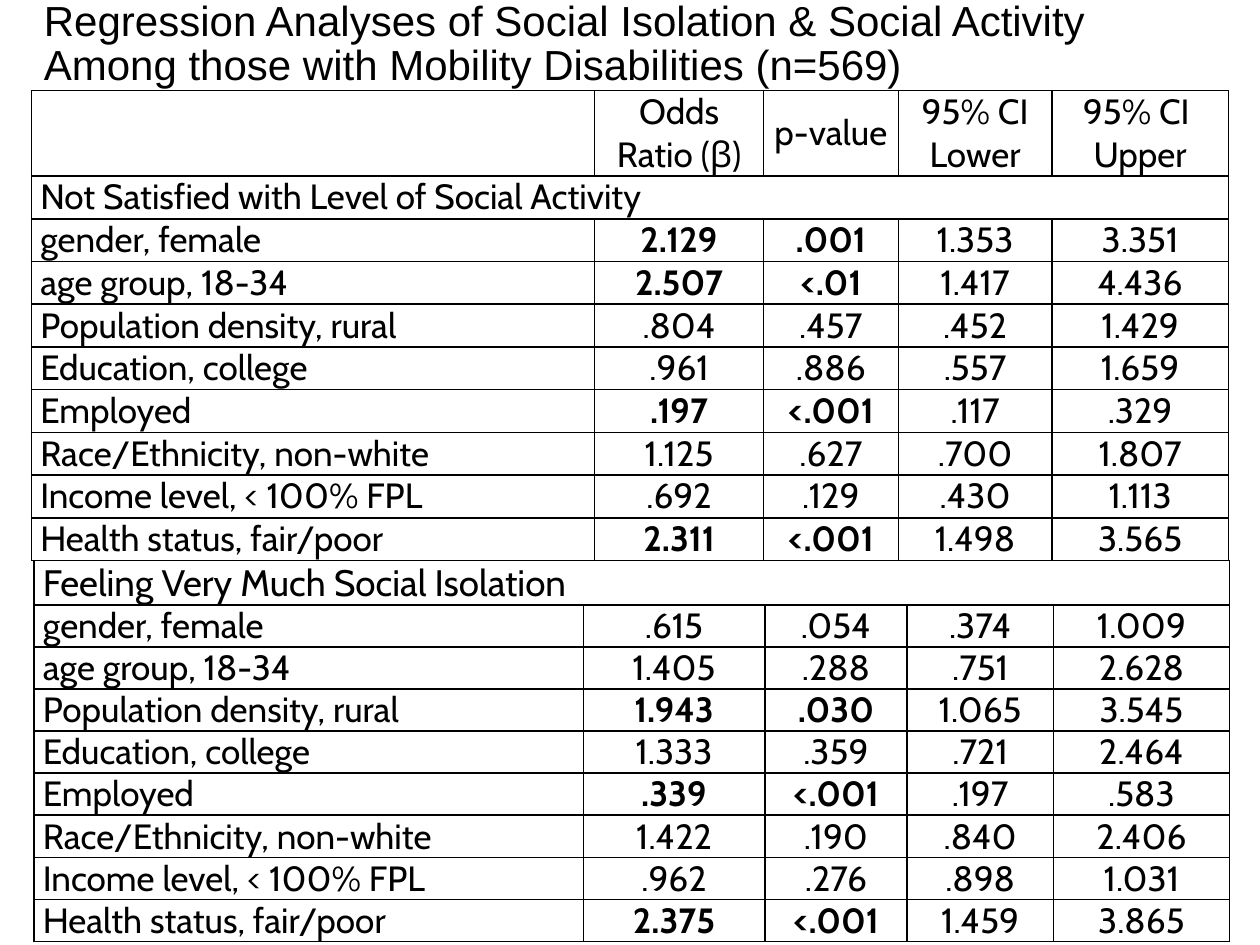
"""Build a slide with two regression tables for people with mobility disabilities."""
from lxml import etree
from pptx import Presentation
from pptx.dml.color import RGBColor
from pptx.enum import text
from pptx.oxml import ns
from pptx.util import Inches, Pt

BLACK = RGBColor(0x00, 0x00, 0x00)
ROW_HEIGHT = 1 / 3
SIGNIFICANCE = 0.05

TITLE = ("Regression Analyses of Social Isolation & Social Activity "
         "Among those with Mobility Disabilities (n=569)")
HEADER = ["", "Odds Ratio (β)", "p-value", "95% CI Lower", "95% CI \vUpper"]
PREDICTORS = ["gender, female", "age group, 18-34", "Population density, rural",
              "Education, college", "Employed", "Race/Ethnicity, non-white",
              "Income level, < 100% FPL", "Health status, fair/poor"]
ACTIVITY = {
    "heading": "Not Satisfied with Level of Social Activity",
    "heading_size": 20, "heading_height": ROW_HEIGHT, "header": HEADER,
    "left": 0.25, "top": 0.72, "columns": [4.47, 1.34, 1.07, 1.22, 1.4],
    "values": [
        ("2.129", ".001", "1.353", "3.351"),
        ("2.507", "<.01", "1.417", "4.436"),
        (".804", ".457", ".452", "1.429"),
        (".961", ".886", ".557", "1.659"),
        (".197", "<.001", ".117", ".329"),
        ("1.125", ".627", ".700", "1.807"),
        (".692", ".129", ".430", "1.113"),
        ("2.311", "<.001", "1.498", "3.565"),
    ],
}
ISOLATION = {
    "heading": "Feeling Very Much Social Isolation",
    "heading_size": 21, "heading_height": 0.35, "header": None,
    "left": 0.27, "top": 4.45, "columns": [4.36, 1.44, 1.13, 1.16, 1.4],
    "values": [
        (".615", ".054", ".374", "1.009"),
        ("1.405", ".288", ".751", "2.628"),
        ("1.943", ".030", "1.065", "3.545"),
        ("1.333", ".359", ".721", "2.464"),
        (".339", "<.001", ".197", ".583"),
        ("1.422", ".190", ".840", "2.406"),
        (".962", ".276", ".898", "1.031"),
        ("2.375", "<.001", "1.459", "3.865"),
    ],
}


def add_borders(cell):
    properties = cell._tc.get_or_add_tcPr()
    for side in ("a:lnL", "a:lnR", "a:lnT", "a:lnB"):
        line = etree.SubElement(properties, ns.qn(side), w=str(Pt(1)))
        fill = etree.SubElement(line, ns.qn("a:solidFill"))
        etree.SubElement(fill, ns.qn("a:srgbClr"), val=str(BLACK))


def style_text(para, font, size, bold=False):
    para.font.name = font
    para.font.size = Pt(size)
    para.font.color.rgb = BLACK
    para.font.bold = bold
    for span in para.runs:
        span.font.name = font
        span.font.size = Pt(size)
        span.font.color.rgb = BLACK
        span.font.bold = bold


def fill_cell(cell, words, size=20, bold=False, centred=False):
    cell.margin_left = cell.margin_right = Inches(0.07)
    cell.margin_top = cell.margin_bottom = 0
    add_borders(cell)
    cell.fill.background()
    para = cell.text_frame.paragraphs[0]
    para.text = words
    para.alignment = text.PP_ALIGN.CENTER if centred else text.PP_ALIGN.LEFT
    style_text(para, "Cabin", size, bold)


def add_results(page, model):
    columns = model["columns"]
    header_rows = [model["header"]] if model["header"] else []
    heading_row = [model["heading"]] + [""] * (len(columns) - 1)
    results = [[name, *row] for name, row in zip(PREDICTORS, model["values"])]
    rows = header_rows + [heading_row] + results
    heading_index = len(header_rows)
    heights = ([2 * ROW_HEIGHT] * heading_index + [model["heading_height"]]
               + [ROW_HEIGHT] * len(results))

    table = page.shapes.add_table(
        len(rows), len(columns), Inches(model["left"]), Inches(model["top"]),
        Inches(sum(columns)), Inches(sum(heights))).table
    table.first_row = table.horz_banding = False
    for column, width in zip(table.columns, columns):
        column.width = Inches(width)
    for row, height in zip(table.rows, heights):
        row.height = Inches(height)

    for r, row in enumerate(rows):
        significant = (r > heading_index
                       and float(row[2].lstrip("<")) < SIGNIFICANCE)
        size = model["heading_size"] if r == heading_index else 20
        for c, words in enumerate(row):
            cell = table.cell(r, c)
            fill_cell(cell, words, size, significant and c in (1, 2), c > 0)
            if r < heading_index and c > 1:
                cell.vertical_anchor = text.MSO_ANCHOR.MIDDLE
    table.cell(heading_index, 0).merge(table.cell(heading_index, len(columns) - 1))


def add_title(page):
    box = page.shapes.add_textbox(Inches(0.25), Inches(-0.04), Inches(8.78), Inches(0.8))
    frame = box.text_frame
    frame.word_wrap = True
    frame.vertical_anchor = text.MSO_ANCHOR.MIDDLE
    frame.text = TITLE
    para = frame.paragraphs[0]
    para.line_spacing = Pt(25)
    style_text(para, "Arial", 24)


def main():
    deck = Presentation()
    deck.slide_width, deck.slide_height = Inches(10), Inches(7.5)
    page = deck.slides.add_slide(deck.slide_layouts[6])
    add_results(page, ACTIVITY)
    add_title(page)
    add_results(page, ISOLATION)
    deck.save("out.pptx")


if __name__ == "__main__":
    main()
